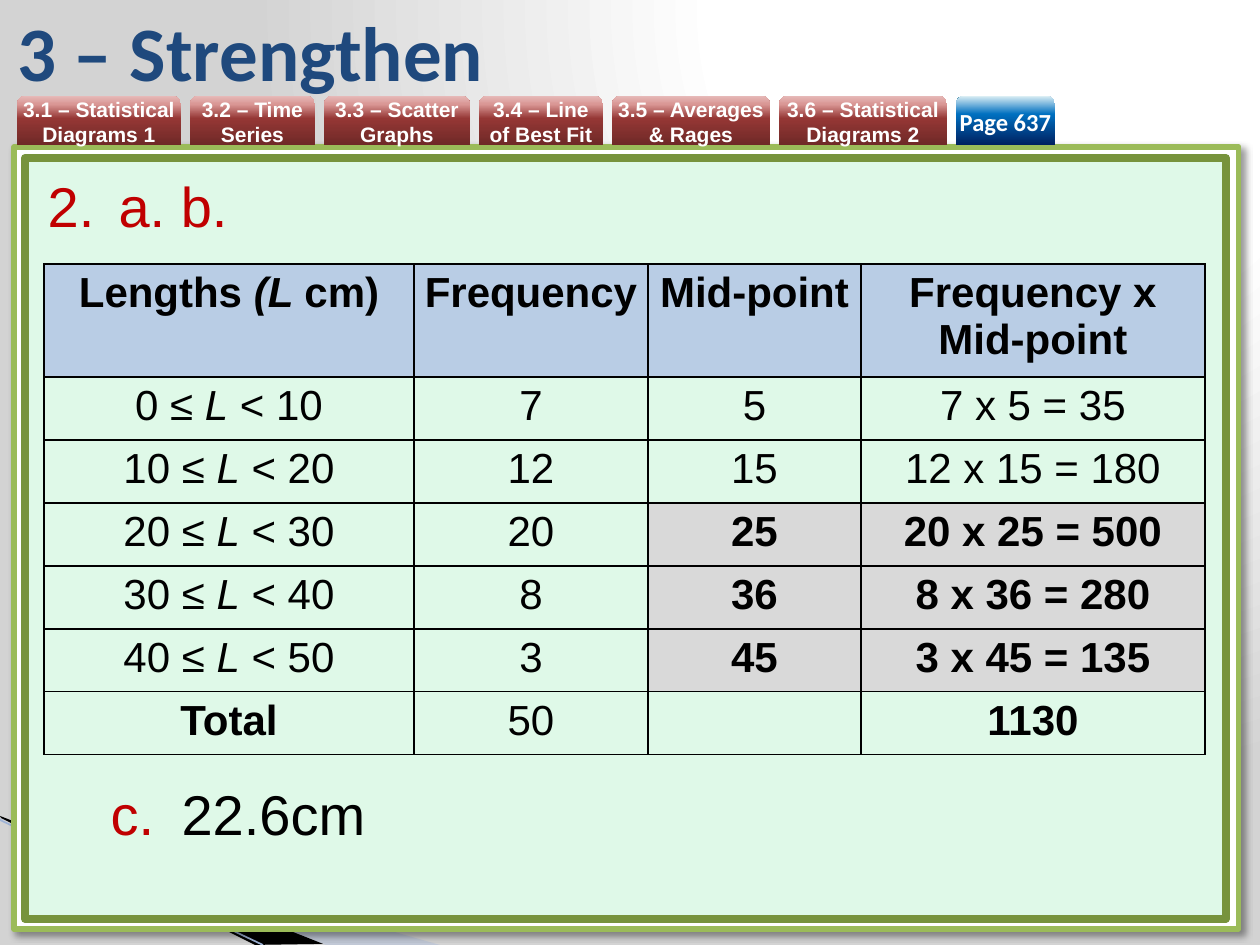
from itertools import product

from lxml.etree import SubElement
from pptx import Presentation
from pptx.dml.color import RGBColor
from pptx.enum.shapes import MSO_CONNECTOR, MSO_SHAPE
from pptx.enum.text import MSO_ANCHOR, MSO_AUTO_SIZE, PP_ALIGN
from pptx.oxml import parse_xml
from pptx.oxml.ns import nsdecls, qn
from pptx.util import Emu, Pt

PX = 914400 // 126

TITLE = "3 – Strengthen"
TABS = [  # label, width
    ("3.1 – Statistical Diagrams 1", 164),
    ("3.2 – Time Series", 125),
    ("3.3 – Scatter Graphs", 146),
    ("3.4 – Line of Best Fit", 124),
    ("3.5 – Averages & Rages", 158),
    ("3.6 – Statistical Diagrams 2", 168),
    ("Page 637", 99),
]
ANSWERS = [  # text, level, numbering, first number, space before, colour
    ("a. b.", 0, "arabicPeriod", 2, 0, "accent"),
    ("22.6cm", 1, "alphaLcPeriod", 3, 309, "ink"),
]
# Text between asterisks is italic
ROWS = [
    ("Lengths *(L *cm)", "Frequency", "Mid-point", "Frequency x Mid-point"),
    ("0 ≤ *L* < 10", "7", "5", "7 x 5 = 35"),
    ("10 ≤ *L* < 20", "12", "15", "12 x 15 = 180"),
    ("20 ≤ *L* < 30", "20", "25", "20 x 25 = 500"),
    ("30 ≤ *L* < 40", "8", "36", "8 x 36 = 280"),
    ("40 ≤ *L* < 50", "3", "45", "3 x 45 = 135"),
    ("Total", "50", "", "1130"),
]
COLUMN_WIDTHS = [370, 234, 213, 344]
ROW_HEIGHTS = [113] + [63] * 6
SOLVED = set(product((3, 4, 5), (2, 3)))
BOLD = SOLVED | {(0, column) for column in range(4)} | {(6, 0), (6, 3)}

PANELS = [  # box, fill, border, border width
    ((14, 147, 1225, 782), "white", "frame", 3),
    ((25, 158, 1201, 761), "mint", "inner_frame", 4.33),
]
SWOOSHES = [  # points, fill, opacity
    ([(0, 819), (440, 945), (326, 945), (0, 818)], "swoosh", 40),
    ([(0, 816), (323, 944), (255, 945), (1, 818)], "ink", 100),
]

THEME = {
    "white": "FFFFFF", "ink": "000000", "accent": "C00000", "title": "1F497D",
    "frame": "9BBB59", "inner_frame": "77933C", "mint": "DFF9E8",
    "swoosh": "A7B9DB", "swoosh_line": "9EB3D6",
    "header": "B9CDE5", "solved": "D9D9D9",
    "backdrop": [(0, "FFFFFF"), (40, "FFFFFF"), (100, "D3D3D3")],
    "tab": [(0, "6F2927"), (54, "953735"), (83, "D99694"), (100, "E6B9B8")],
    "page": [(0, "002060"), (63, "0070C0"), (100, "DBEEF4")],
    "text": "Arial", "display": "Calibri",
    "title_size": 44, "answer_size": 32, "table_size": 24,
    "tab_size": 12, "page_size": 14,
}


def px(*lengths):
    return [Emu(length * PX) for length in lengths]


def rgb(name):
    return RGBColor.from_string(THEME[name])


def gradient(name, direction):
    stops = "".join(
        f'<a:gs pos="{place * 1000}"><a:srgbClr val="{colour}"/></a:gs>'
        for place, colour in THEME[name])
    return (f'<a:gradFill {nsdecls("a")} rotWithShape="1">'
            f'<a:gsLst>{stops}</a:gsLst>{direction}</a:gradFill>')


def set_format(target, **values):
    for key, value in values.items():
        setattr(target, key, value)


def set_font(target, size, colour, face="text", **extras):
    set_format(target.font, name=THEME[face], size=Pt(THEME[size]), **extras)
    target.font.color.rgb = rgb(colour)


def add_backdrop(slide):
    fill = gradient("backdrop", '<a:path path="circle">'
                    '<a:fillToRect l="65000" t="0" r="0" b="98000"/></a:path>')
    slide.element.cSld.insert(0, parse_xml(
        f'<p:bg {nsdecls("p", "a")}><p:bgPr>{fill}<a:effectLst/></p:bgPr></p:bg>'))


def add_swooshes(shapes):
    for points, colour, opacity in SWOOSHES:
        builder = shapes.build_freeform(*points[0], scale=PX)
        builder.add_line_segments(points[1:], close=True)
        swoosh = builder.convert_to_shape()
        swoosh.shadow.inherit = False
        swoosh.fill.solid()
        swoosh.fill.fore_color.rgb = rgb(colour)
        swoosh.line.fill.background()
        if opacity < 100:
            tint = swoosh.element.spPr.find(".//" + qn("a:srgbClr"))
            SubElement(tint, qn("a:alpha"), val=str(opacity * 1000))
    edge = shapes.add_connector(MSO_CONNECTOR.STRAIGHT, *px(0, 820, 263, 945))
    edge.line.color.rgb = rgb("swoosh_line")
    edge.line.width = Pt(0.95)
    SubElement(edge.element.spPr, qn("a:effectLst"))


def add_panels(shapes):
    for index, (box, fill, border, width) in enumerate(PANELS):
        panel = shapes.add_shape(MSO_SHAPE.RECTANGLE, *px(*box))
        panel.shadow.inherit = False
        panel.fill.solid()
        panel.fill.fore_color.rgb = rgb(fill)
        panel.line.color.rgb = rgb(border)
        panel.line.width = Pt(width)
        if index == 0:
            panel.element.spPr.find(qn("a:effectLst")).append(parse_xml(
                f'<a:outerShdw {nsdecls("a")} blurRad="{Pt(4)}" dist="{Pt(3)}" '
                'dir="2700000" algn="tl" rotWithShape="0"><a:srgbClr val="000000">'
                '<a:alpha val="40000"/></a:srgbClr></a:outerShdw>'))


def add_tabs(shapes, left=17, gap=9):
    for label, width in TABS:
        is_page = label.startswith("Page")
        tab = shapes.add_shape(MSO_SHAPE.ROUND_2_SAME_RECTANGLE,
                               *px(left, 96, width, 49))
        tab.shadow.inherit = False
        tab.line.fill.background()
        tab.fill.background()
        blank = tab.element.spPr.find(qn("a:noFill"))
        tab.element.spPr.replace(blank, parse_xml(gradient(
            "page" if is_page else "tab", '<a:lin ang="16200000" scaled="0"/>')))
        frame = tab.text_frame
        set_format(frame, text=label, word_wrap=True, margin_left=0, margin_right=0,
                   margin_top=0, margin_bottom=0, vertical_anchor=MSO_ANCHOR.MIDDLE)
        paragraph = frame.paragraphs[0]
        paragraph.alignment = PP_ALIGN.CENTER
        set_font(paragraph.runs[0], "page_size" if is_page else "tab_size", "white",
                 "display" if is_page else "text", bold=True)
        left += width + gap


def place(placeholder, box):
    left, top, width, height = px(*box)
    set_format(placeholder, left=left, top=top, width=width, height=height)
    set_format(placeholder.text_frame, word_wrap=True, auto_size=MSO_AUTO_SIZE.NONE)
    return placeholder.text_frame


def fill_title(title):
    frame = place(title, (5, 6, 1062, 89))
    set_format(frame, text=TITLE, vertical_anchor=MSO_ANCHOR.MIDDLE)
    paragraph = frame.paragraphs[0]
    paragraph.alignment = PP_ALIGN.LEFT
    set_font(paragraph.runs[0], "title_size", "title", "display", bold=True)


def fill_answers(body):
    frame = place(body, (35, 165, 1181, 692))
    for index, (text, level, numbering, first, before, colour) in enumerate(ANSWERS):
        paragraph = frame.add_paragraph() if index else frame.paragraphs[0]
        set_format(paragraph, text=text, level=level)
        props = paragraph._p.get_or_add_pPr()
        props.set("marL", str((71 + 63 * level) * PX))
        props.set("indent", str(-71 * PX))
        bullet_colour = SubElement(props, qn("a:buClr"))
        SubElement(bullet_colour, qn("a:srgbClr"), val=THEME["accent"])
        SubElement(props, qn("a:buFont"), typeface=THEME["text"])
        SubElement(props, qn("a:buAutoNum"), type=numbering, startAt=str(first))
        paragraph.space_before = Pt(before)
        set_font(paragraph.runs[0], "answer_size", colour)


def add_border(cell):
    for side in ("lnL", "lnR", "lnT", "lnB"):
        cell._tc.get_or_add_tcPr().append(parse_xml(
            f'<a:{side} {nsdecls("a")} w="{Pt(1)}"><a:solidFill>'
            f'<a:srgbClr val="{THEME["ink"]}"/></a:solidFill></a:{side}>'))


def add_frequency_table(shapes):
    table = shapes.add_table(len(ROWS), len(COLUMN_WIDTHS), *px(
        44, 264, sum(COLUMN_WIDTHS), sum(ROW_HEIGHTS))).table
    set_format(table, first_row=False, horz_banding=False)
    for column, width in zip(table.columns, px(*COLUMN_WIDTHS)):
        column.width = width
    for row, height in zip(table.rows, px(*ROW_HEIGHTS)):
        row.height = height
    for spot in product(range(len(ROWS)), range(len(COLUMN_WIDTHS))):
        row, column = spot
        cell = table.cell(row, column)
        margin = px(6)[0]
        set_format(cell, margin_left=margin, margin_right=margin,
                   margin_top=margin, margin_bottom=margin)
        add_border(cell)
        if row == 0 or spot in SOLVED:
            cell.fill.solid()
            cell.fill.fore_color.rgb = rgb("solved" if row else "header")
        else:
            cell.fill.background()
        paragraph = cell.text_frame.paragraphs[0]
        paragraph.alignment = PP_ALIGN.CENTER
        for part, text in enumerate(ROWS[row][column].split("*")):
            if text:
                run = paragraph.add_run()
                run.text = text
                set_font(run, "table_size", "ink", bold=spot in BOLD,
                         italic=part % 2 == 1)


def main():
    deck = Presentation()
    deck.slide_width, deck.slide_height = px(1260, 945)
    slide = deck.slides.add_slide(deck.slide_layouts[1])
    shapes = slide.shapes
    title, body = slide.placeholders
    add_backdrop(slide)
    add_swooshes(shapes)
    add_panels(shapes)
    add_tabs(shapes)
    fill_title(title)
    fill_answers(body)
    for placeholder in (title, body):  # bring the text in front of the panels
        shapes.element.append(placeholder.element)
    add_frequency_table(shapes)
    deck.save("out.pptx")


if __name__ == "__main__":
    main()
